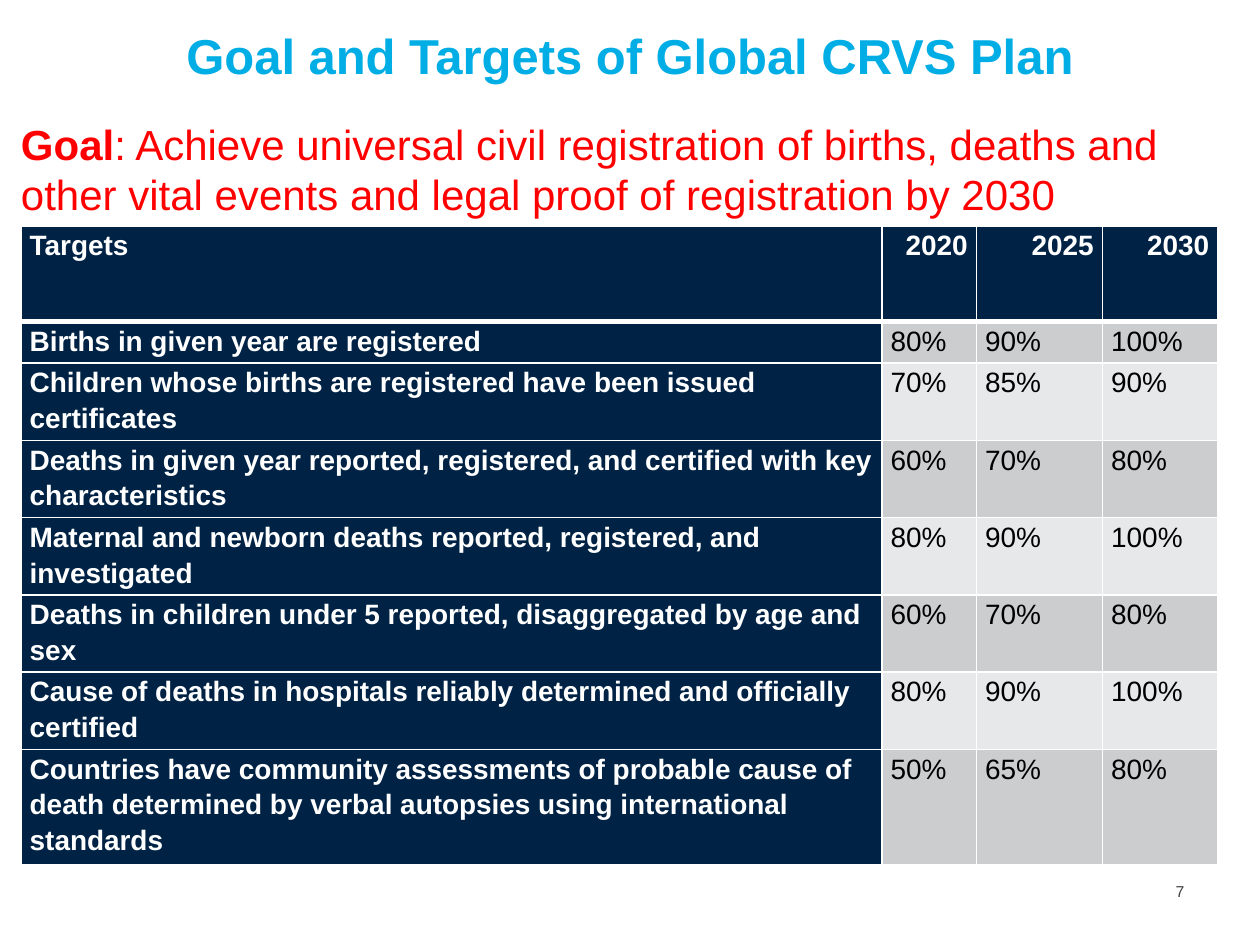
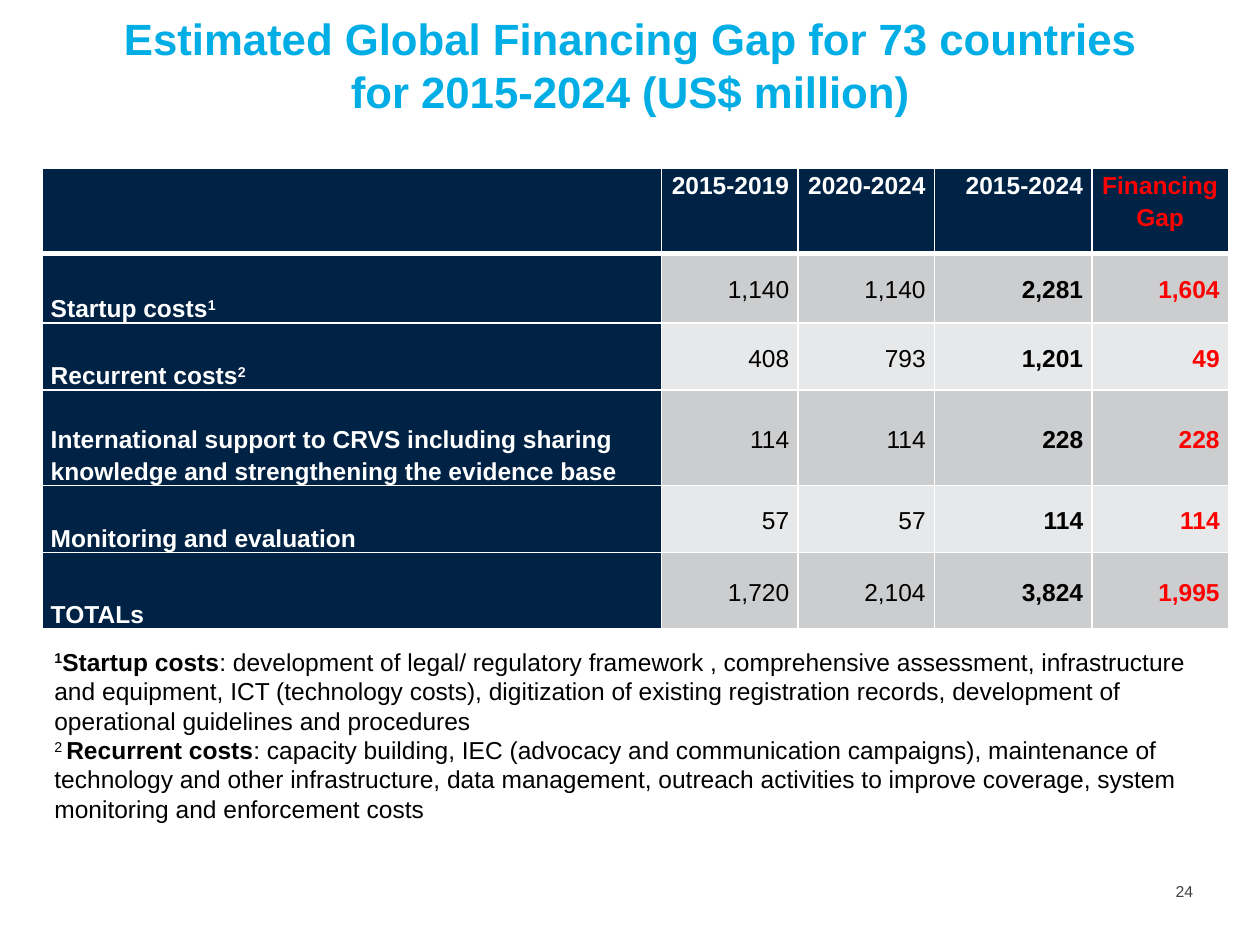
"""Build two slides on the targets and the financing gap of the CRVS plan."""
from dataclasses import dataclass
from typing import NamedTuple

from lxml.etree import SubElement
from pptx import Presentation
from pptx.dml.color import RGBColor
from pptx.enum.text import MSO_ANCHOR, MSO_AUTO_SIZE, PP_ALIGN
from pptx.oxml.ns import qn
from pptx.util import Pt

CYAN = RGBColor(0x00, 0xAD, 0xE4)
NAVY = RGBColor(0x00, 0x23, 0x45)
RED = RGBColor(0xFF, 0x00, 0x00)
WHITE = RGBColor(0xFF, 0xFF, 0xFF)
BLACK = RGBColor(0x00, 0x00, 0x00)
GREY = RGBColor(0x40, 0x40, 0x40)
BANDS = (RGBColor(0xCC, 0xCD, 0xCF), RGBColor(0xE7, 0xE8, 0xE9))
FONT = "Arial"
LEFT, RIGHT, CENTER = PP_ALIGN.LEFT, PP_ALIGN.RIGHT, PP_ALIGN.CENTER
TOP, MID, LOW = MSO_ANCHOR.TOP, MSO_ANCHOR.MIDDLE, MSO_ANCHOR.BOTTOM


class Box(NamedTuple):
    """Place and size in points."""
    left: float
    top: float
    width: float
    height: float


class Piece(NamedTuple):
    """A run of text with its own look."""
    text: str
    bold: bool = False
    color: RGBColor = BLACK
    sup: bool = False


class Cell(NamedTuple):
    """The runs, alignment and anchor of a table cell."""
    runs: tuple
    align: PP_ALIGN = LEFT
    anchor: MSO_ANCHOR = TOP


@dataclass
class Grid:
    """A table with its sizes in points."""
    left: float
    top: float
    cols: tuple
    rows: tuple
    size: float
    after: float
    cells: list


TITLE = Box(0, 7.2, 720, 61.2)
GOAL = Box(12, 67.7, 708, 414)
NOTE = Box(24, 366, 678, 108.7)
PAGE = Box(671.8, 501.1, 22.3, 17.3)


def place(shape, box: Box) -> None:
    """Move a shape to its box."""
    shape.left, shape.top, shape.width, shape.height = map(Pt, box)


def inset(item, left: float, top: float, right: float, low: float) -> None:
    """Set the inner margins of a text frame or cell."""
    item.margin_left, item.margin_top = Pt(left), Pt(top)
    item.margin_right, item.margin_bottom = Pt(right), Pt(low)


def write(para, runs: tuple, size: float) -> None:
    """Add runs to a paragraph."""
    for piece in runs:
        run = para.add_run()
        run.text = piece.text
        font = run.font
        font.name, font.size, font.bold = FONT, Pt(size), piece.bold
        font.color.rgb = piece.color
        if piece.sup:
            font._element.set("baseline", "30000")


def head(slide, lines: tuple, size: float, low: float) -> None:
    """Fill the title placeholder."""
    title = slide.shapes.title
    place(title, TITLE)
    frame = title.text_frame
    frame.auto_size, frame.vertical_anchor = MSO_AUTO_SIZE.NONE, LOW
    frame.word_wrap = True
    inset(frame, 0, 0, 0, low)
    para = frame.paragraphs[0]
    para.alignment = CENTER
    for spot, line in enumerate(lines):
        if spot:
            para.add_line_break()
        write(para, (Piece(line, True, CYAN),), size)


def foot(slide, number: str) -> None:
    """Add the page number."""
    frame = slide.shapes.add_textbox(*map(Pt, PAGE)).text_frame
    frame.word_wrap = True
    inset(frame, 0, 3, 0, 0)
    write(frame.paragraphs[0], (Piece(number, color=GREY),), 9)


def goal(slide) -> None:
    """Fill the body placeholder with the goal."""
    body = slide.placeholders[1]
    place(body, GOAL)
    frame = body.text_frame
    frame.auto_size = MSO_AUTO_SIZE.NONE
    inset(frame, 0, 0, 0, 0)
    para = frame.paragraphs[0]
    props = para._p.get_or_add_pPr()
    props.set("marL", "0")
    props.set("indent", "0")
    SubElement(props, qn("a:buNone"))
    para.space_before = Pt(0)
    write(para, (
        Piece("Goal", True, RED),
        Piece(": Achieve universal civil registration of births, deaths and other "
              "vital events and legal proof of registration by 2030", color=RED),
    ), 24)


def edge(cell, row: int) -> None:
    """Draw white cell borders, thick below the header."""
    props = cell._tc.get_or_add_tcPr()
    for side in "LRTB":
        thick = (row, side) in ((0, "B"), (1, "T"))
        line = SubElement(props, qn(f"a:ln{side}"), w=str(Pt(3 if thick else 1)))
        fill = SubElement(line, qn("a:solidFill"))
        SubElement(fill, qn("a:srgbClr"), val=str(WHITE))


def draw(slide, grid: Grid) -> None:
    """Draw a table with a navy header row and first column."""
    box = Box(grid.left, grid.top, sum(grid.cols), sum(grid.rows))
    frame = slide.shapes.add_table(len(grid.rows), len(grid.cols), *map(Pt, box))
    table = frame.table
    for col, width in zip(table.columns, grid.cols):
        col.width = Pt(width)
    for row, height in zip(table.rows, grid.rows):
        row.height = Pt(height)
    for r, line in enumerate(grid.cells):
        for c, data in enumerate(line):
            cell = table.cell(r, c)
            edge(cell, r)
            cell.fill.solid()
            cell.fill.fore_color.rgb = BANDS[(r - 1) % 2] if r and c else NAVY
            inset(cell, 5, 0, 5, 0)
            cell.vertical_anchor = data.anchor
            para = cell.text_frame.paragraphs[0]
            para.alignment, para.line_spacing = data.align, 1.15
            para.space_after = Pt(grid.after)
            write(para, data.runs, grid.size)


def label(text: str, sup: str = "", anchor: MSO_ANCHOR = TOP,
          align: PP_ALIGN = LEFT, color: RGBColor = WHITE) -> Cell:
    """Make a bold cell with an optional raised mark."""
    runs = (Piece(text, True, color),) if text else ()
    if sup:
        runs += (Piece(sup, True, color, True),)
    return Cell(runs, align, anchor)


def goals() -> Grid:
    """Make the table of targets."""
    data = (
        ("Births in given year are registered", 80, 90, 100),
        ("Children whose births are registered have been issued certificates", 70, 85, 90),
        ("Deaths in given year reported, registered, and certified with key "
         "characteristics", 60, 70, 80),
        ("Maternal and newborn deaths reported, registered, and investigated", 80, 90, 100),
        ("Deaths in children under 5 reported, disaggregated by age and sex", 60, 70, 80),
        ("Cause of deaths in hospitals reliably determined and officially certified",
         80, 90, 100),
        ("Countries have community assessments of probable cause of death determined "
         "by verbal autopsies using international standards", 50, 65, 80),
    )
    cells = [[label("Targets")]
             + [label(year, align=RIGHT) for year in ("2020", "2025", "2030")]]
    for name, *rates in data:
        cells.append([label(name)] + [Cell((Piece(f"{rate}%"),)) for rate in rates])
    return Grid(12, 129, (492, 54, 72, 66),
                (54.7, 23.8, 29.5, 42.5, 23.8, 42.5, 42.5, 64.1), 16, 6, cells)


def costs() -> Grid:
    """Make the table of costs."""
    data = (
        ("Startup costs", "1", 1140, 1140, 2281, 1604),
        ("Recurrent costs", "2", 408, 793, 1201, 49),
        ("International support to CRVS including sharing knowledge and "
         "strengthening the evidence base", "", 114, 114, 228, 228),
        ("Monitoring and evaluation", "", 57, 57, 114, 114),
        ("TOTALs", "", 1720, 2104, 3824, 1995),
    )
    looks = ((False, BLACK), (False, BLACK), (True, BLACK), (True, RED))
    spans = ("2015-2019", "2020-2024", "2015-2024")
    cells = [[label("")] + [label(span, align=RIGHT) for span in spans]
             + [label("Financing Gap", align=CENTER, color=RED)]]
    for name, sup, *sums in data:
        cells.append([label(name, sup, LOW)]
                     + [Cell((Piece(f"{cost:,}", *look),), RIGHT, MID)
                        for cost, look in zip(sums, looks)])
    return Grid(24, 96, (354, 78, 78, 90, 78),
                (49, 39.6, 38.2, 54.7, 38.2, 43.9), 14, 0, cells)


def notes(slide) -> None:
    """Add the two footnotes."""
    frame = slide.shapes.add_textbox(*map(Pt, NOTE)).text_frame
    frame.word_wrap = True
    write(frame.paragraphs[0], (
        Piece("1", True, sup=True),
        Piece("Startup costs", True),
        Piece(": development of legal/ regulatory framework , comprehensive assessment, "
              "infrastructure and equipment, ICT (technology costs), digitization of "
              "existing registration records, development of operational guidelines "
              "and procedures"),
    ), 14)
    write(frame.add_paragraph(), (
        Piece("2 ", sup=True),
        Piece("Recurrent costs", True),
        Piece(": capacity building, IEC (advocacy and communication campaigns), "
              "maintenance of technology and other infrastructure, data management, "
              "outreach activities to improve coverage, system monitoring and "
              "enforcement costs"),
    ), 14)


def main() -> None:
    """Build and save the deck."""
    deck = Presentation()
    deck.slide_width, deck.slide_height = Pt(720), Pt(540)

    slide = deck.slides.add_slide(deck.slide_layouts[1])
    head(slide, ("Goal and Targets of Global CRVS Plan",), 28, 20)
    foot(slide, "7")
    goal(slide)
    draw(slide, goals())

    slide = deck.slides.add_slide(deck.slide_layouts[5])
    head(slide, ("Estimated Global Financing Gap for 73 countries",
                 "for 2015-2024 (US$ million)"), 25, 1.5)
    foot(slide, "24")
    draw(slide, costs())
    notes(slide)

    deck.save("out.pptx")


if __name__ == "__main__":
    main()
